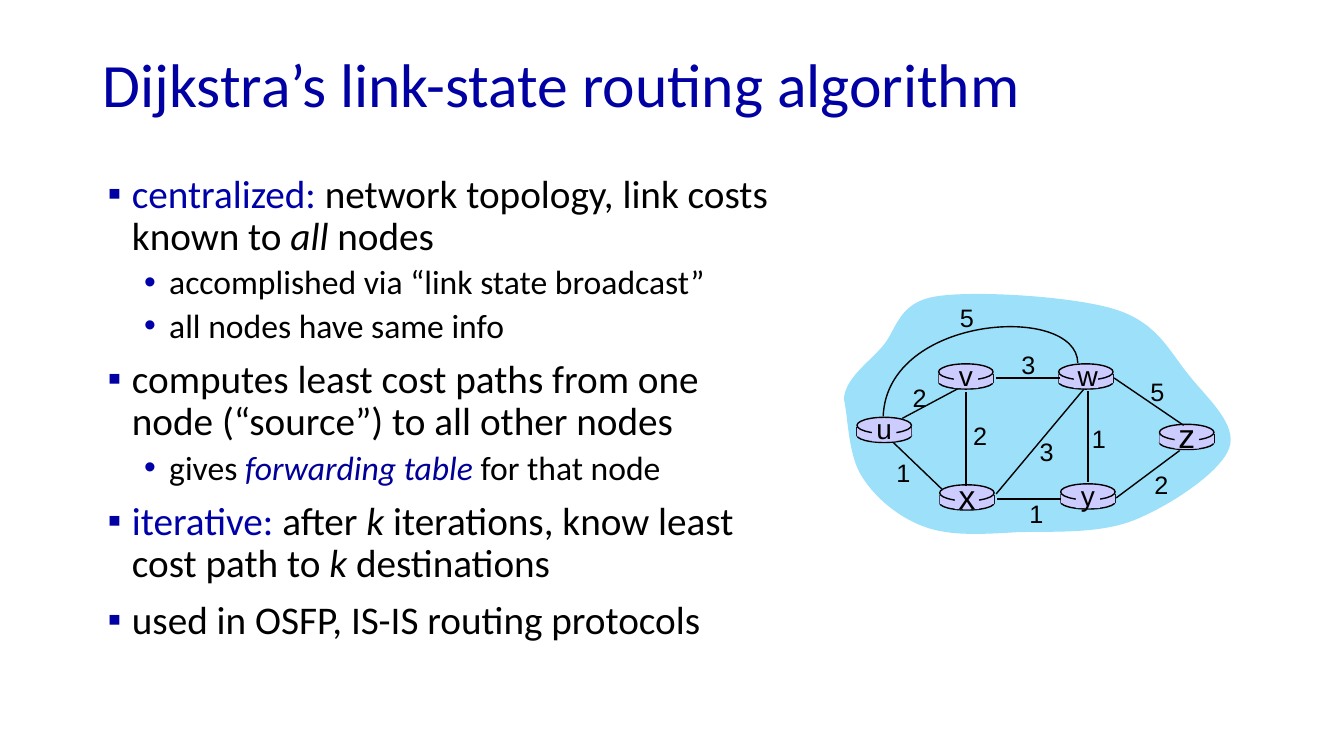
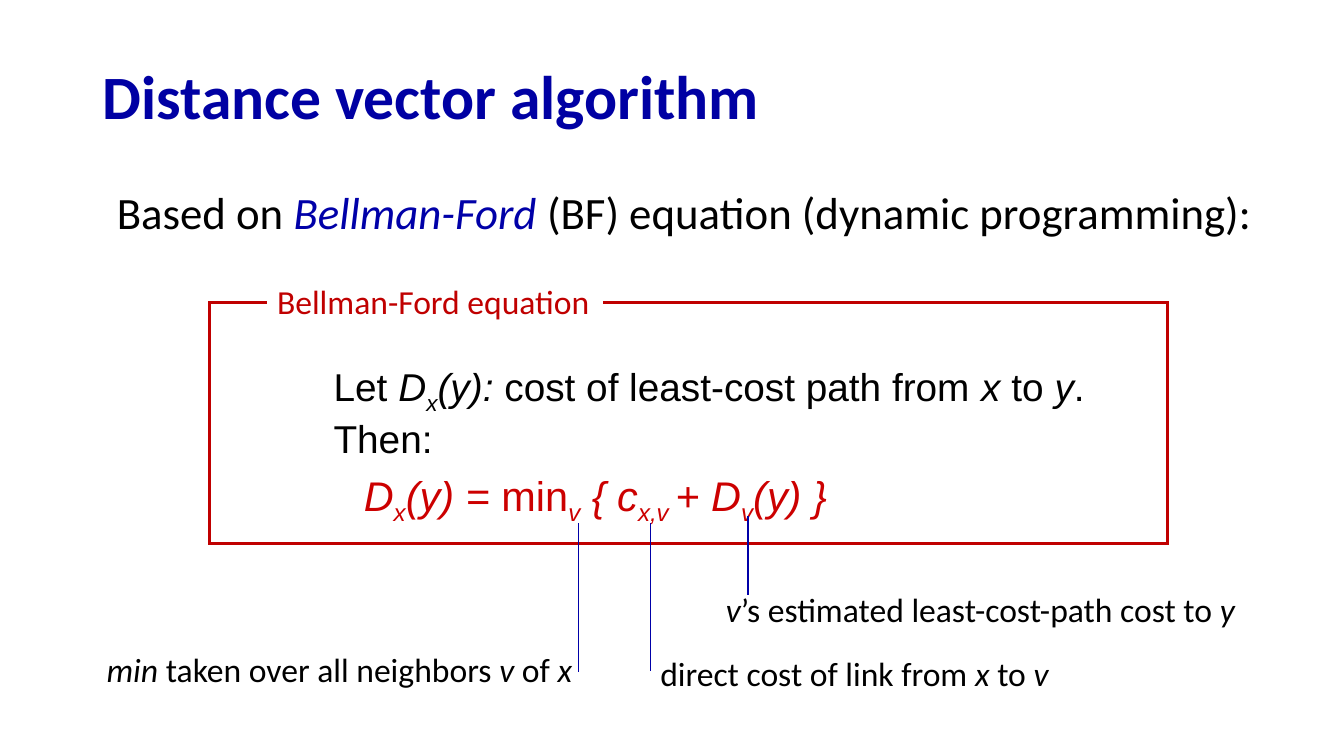
import dataclasses

import lxml.etree
import pptx
import pptx.dml.color
import pptx.enum.shapes
import pptx.enum.text
import pptx.oxml.ns
import pptx.util

Inches = pptx.util.Inches
Pt = pptx.util.Pt
SHAPES = pptx.enum.shapes.MSO_SHAPE
ANCHORS = pptx.enum.text.MSO_ANCHOR
ALIGNS = pptx.enum.text.PP_ALIGN


@dataclasses.dataclass(frozen=True)
class Theme:
    title_ink: str = "0000A3"
    key_ink: str = "0000A8"
    term_ink: str = "000099"
    ink: str = "000000"
    paper: str = "FFFFFF"
    frame_ink: str = "C00000"
    formula_ink: str = "CC0000"
    cloud: str = "9CE0FA"
    router: str = "CCCCFF"
    prose: str = "Calibri"
    figure: str = "Arial"
    title_size: float = 44
    lead_size: float = 32
    body_size: float = 28
    detail_size: float = 24
    definition_size: float = 27.7
    formula_size: float = 29.6
    node_size: float = 20
    cost_size: float = 18


THEME = Theme()

SPAN_STYLES = {
    "plain": {},
    "key": {"ink": THEME.key_ink},
    "emph": {"italic": True},
    "term": {"ink": THEME.term_ink, "italic": True},
    "name": {"ink": THEME.key_ink, "italic": True},
    "sub": {"italic": True, "lowered": True},
}

BULLETS = [
    {"size": THEME.body_size, "margin": 0.39, "indent": -0.24, "before": 10,
     "mark": "▪", "mark_ink": THEME.title_ink},
    {"size": THEME.detail_size, "margin": 0.76, "indent": -0.25, "before": 5,
     "mark": "•", "mark_ink": THEME.key_ink},
]


def rgb(value):
    return pptx.dml.color.RGBColor.from_string(value)


def add_node(parent, tag, **attributes):
    return lxml.etree.SubElement(parent, pptx.oxml.ns.qn(tag), attributes)


def paint(shape, fill=None, line=None, width=1):
    shape.shadow.inherit = False
    if fill:
        shape.fill.solid()
        shape.fill.fore_color.rgb = rgb(fill)
    else:
        shape.fill.background()
    if line:
        shape.line.color.rgb = rgb(line)
        shape.line.width = Pt(width)
    else:
        shape.line.fill.background()
    return shape


def add_preset(page, kind, box, **look):
    return paint(page.shapes.add_shape(kind, *map(Inches, box)), **look)


def add_line(page, start, end, ink):
    line = page.shapes.add_connector(
        pptx.enum.shapes.MSO_CONNECTOR.STRAIGHT, *map(Inches, (*start, *end)))
    line.line.color.rgb = rgb(ink)
    line.line.width = Pt(1)
    add_node(line._element.spPr, "a:effectLst")


def add_curve(page, start, segments, closed, **look):
    builder = page.shapes.build_freeform(*map(Inches, start))
    builder.add_line_segments(
        [tuple(map(Inches, point)) for segment in segments for point in segment],
        close=closed)
    shape = paint(builder.convert_to_shape(), **look)
    corners = list(shape._element.iter(pptx.oxml.ns.qn("a:lnTo")))
    for first in range(0, len(corners), 3):
        curve = lxml.etree.Element(pptx.oxml.ns.qn("a:cubicBezTo"))
        corners[first].addprevious(curve)
        for corner in corners[first:first + 3]:
            curve.append(corner[0])
            corner.getparent().remove(corner)


def add_spans(para, spans, size, face, ink, bold=False):
    for text, style in spans:
        formats = {"ink": ink, "bold": bold, "italic": False, **SPAN_STYLES[style]}
        span = para.add_run()
        span.text = text
        span.font.color.rgb = rgb(formats.pop("ink"))
        if formats.pop("lowered", False):
            span._r.get_or_add_rPr().set("baseline", "-25000")
        for name, value in {"size": Pt(size), "name": face, **formats}.items():
            setattr(span.font, name, value)


def format_para(para, spacing=1.0, before=0, margin=0, indent=0, mark=None, mark_ink=None):
    for name, value in {"line_spacing": spacing, "space_before": Pt(before)}.items():
        setattr(para, name, value)
    properties = para._p.get_or_add_pPr()
    for name, value in {"marL": margin, "indent": indent}.items():
        properties.set(name, str(int(Inches(value))))
    if mark:
        add_node(add_node(properties, "a:buClr"), "a:srgbClr", val=mark_ink)
        add_node(properties, "a:buFont", typeface=THEME.figure)
        add_node(properties, "a:buChar", char=mark)


def add_text(page, box, spans, size, face=THEME.prose, ink=THEME.ink, bold=False,
             wrap=True, anchor=ANCHORS.TOP, align=ALIGNS.LEFT, **layout):
    shape = page.shapes.add_textbox(*map(Inches, box))
    frame = shape.text_frame
    for name, value in {"word_wrap": wrap, "vertical_anchor": anchor}.items():
        setattr(frame, name, value)
    para = frame.paragraphs[0]
    para.alignment = align
    format_para(para, **layout)
    add_spans(para, spans, size, face, ink, bold)
    return shape


def add_title(page, box, text, bold=False):
    add_text(page, box, [(text, "plain")], THEME.title_size, ink=THEME.title_ink,
             bold=bold, anchor=ANCHORS.MIDDLE, spacing=0.9)


def add_centred_label(page, centre, text, size):
    width, height = 0.36, 0.4
    x, y = centre
    add_text(page, (x - width / 2, y - height / 2, width, height), [(text, "plain")],
             size, face=THEME.figure, wrap=False, anchor=ANCHORS.MIDDLE,
             align=ALIGNS.CENTER)


def add_bullets(page, box, items):
    frame = page.shapes.add_textbox(*map(Inches, box)).text_frame
    frame.word_wrap = True
    for index, (level, spans) in enumerate(items):
        para = frame.add_paragraph() if index else frame.paragraphs[0]
        para.level = level
        layout = dict(BULLETS[level])
        size = layout.pop("size")
        format_para(para, spacing=0.9, **layout)
        add_spans(para, spans, size, THEME.prose, THEME.ink)


def add_router(page, left, top):
    width, side_top, side_height = 0.54, 0.1, 0.09
    look = {"fill": THEME.router, "line": THEME.ink}
    add_preset(page, SHAPES.OVAL, (left, top + 0.11, width, 0.14), **look)
    for x in (left, left + width):
        add_line(page, (x, top + side_top), (x, top + side_top + side_height), THEME.ink)
    add_preset(page, SHAPES.RECTANGLE, (left, top + side_top, width, side_height),
               fill=THEME.router)
    add_preset(page, SHAPES.OVAL, (left, top, width, 0.16), **look)


def add_network(page, origin):
    def at(point):
        return point[0] + origin[0], point[1] + origin[1]

    def along(segments):
        return [tuple(map(at, segment)) for segment in segments]

    cloud = [
        ((0.01, 0.88), (0.23, 0.73), (0.38, 0.56)),
        ((0.53, 0.39), (0.53, 0.12), (0.92, 0.06)),
        ((1.3, 0), (2.28, 0.06), (2.69, 0.19)),
        ((3.11, 0.32), (3.23, 0.61), (3.42, 0.84)),
        ((3.6, 1.07), (3.91, 1.33), (3.82, 1.57)),
        ((3.73, 1.81), (3.23, 2.14), (2.88, 2.28)),
        ((2.53, 2.42), (2.07, 2.39), (1.72, 2.4)),
        ((1.38, 2.42), (1.06, 2.44), (0.81, 2.35)),
        ((0.55, 2.26), (0.31, 2.06), (0.18, 1.85)),
        ((0.04, 1.64), (0.04, 1.24), (0, 1.08)),
    ]
    routers = {
        "u": (0.13, 1.26, THEME.node_size), "y": (2.15, 1.92, THEME.node_size),
        "x": (0.95, 1.93, THEME.detail_size), "w": (2.13, 0.73, THEME.node_size),
        "v": (0.94, 0.73, THEME.node_size), "z": (3.13, 1.33, THEME.detail_size),
    }
    links = [
        ((0.58, 1.27), (1.18, 0.95), "2", (0.75, 1.06)),
        ((1.21, 1.01), (1.21, 1.94), "2", (1.35, 1.44)),
        ((0.97, 1.97), (0.49, 1.51), "1", (0.59, 1.81)),
        ((1.51, 2.02), (2.38, 0.98), "3", (2.01, 1.6)),
        ((2.15, 2.07), (1.52, 2.07), "1", (1.91, 2.21)),
        ((2.42, 1), (2.42, 1.9), "1", (2.53, 1.47)),
        ((2.7, 2.06), (3.33, 1.59), "2", (3.15, 1.93)),
        ((3.37, 1.34), (2.68, 0.87), "5", (3.11, 1)),
        ((2.14, 0.87), (1.51, 0.87), "3", (1.83, 0.74)),
    ]
    add_curve(page, at((0, 1.08)), along(cloud), True, fill=THEME.cloud)
    for left, top, size in routers.values():
        add_router(page, *at((left, top)))
    for start, end, cost, centre in links:
        add_line(page, at(start), at(end), THEME.ink)
    add_curve(page, at((2.32, 0.72)),
              along([((2.31, 0.13), (0.43, 0.24), (0.39, 1.25))]), False, line=THEME.ink)
    for name, (left, top, size) in routers.items():
        add_preset(page, SHAPES.RECTANGLE, (*at((left + 0.15, top + 0.02)), 0.24, 0.22),
                   fill=THEME.router)
        add_centred_label(page, at((left + 0.27, top + 0.11)), name, size)
    for start, end, cost, centre in links:
        add_centred_label(page, at(centre), cost, THEME.cost_size)
    add_centred_label(page, at((1.22, 0.27)), "5", THEME.cost_size)


def add_equation(page, box):
    left, top, width, height = box
    definition = add_text(
        page, (left + 0.98, top + 0.6, 8.7, 2.16),
        [("Let ", "plain"), ("D", "emph"), ("x", "sub"), ("(y): ", "emph"),
         ("cost of least-cost path from ", "plain"), ("x", "emph"), (" to ", "plain"),
         ("y", "emph"), (".", "plain")],
        THEME.definition_size, face=THEME.figure, spacing=0.8, before=10, margin=0.15)
    formula = [("D", "emph"), ("x", "sub"), ("(y) = ", "emph"), ("min", "plain"),
               ("v", "sub"), (" { c", "emph"), ("x,v ", "sub"), ("+ D", "emph"),
               ("v", "sub"), ("(y) }", "emph")]
    for spans, size, ink, margin in (
            ([("Then:", "plain")], THEME.definition_size, THEME.ink, 0.15),
            (formula, THEME.formula_size, THEME.formula_ink, 0.45)):
        para = definition.text_frame.add_paragraph()
        format_para(para, spacing=0.8, before=10, margin=margin)
        add_spans(para, spans, size, THEME.figure, ink)
    frame = add_preset(page, SHAPES.RECTANGLE, box, line=THEME.frame_ink, width=2)
    add_node(frame.line._get_or_add_ln(), "a:miter", lim="800000")
    caption = add_text(page, (left + 0.57, top - 0.26, 3.33, 0.5),
                       [("Bellman-Ford equation", "plain")], THEME.detail_size,
                       ink=THEME.frame_ink, wrap=False)
    paint(caption, fill=THEME.paper)


def add_callout(page, box, spans, line_x, line_top, line_bottom):
    left, top = box[:2]
    add_text(page, box, spans, THEME.detail_size, wrap=False)
    add_line(page, (left + line_x, top + line_top), (left + line_x, top + line_bottom),
             THEME.key_ink)


def build_link_state(page):
    add_title(page, (0.92, 0.38, 10.76, 0.98), "Dijkstra’s link-state routing algorithm")
    add_bullets(page, (0.82, 1.68, 6.99, 5.36), [
        (0, [("centralized: ", "key"), ("network topology, link costs known to ", "plain"),
             ("all", "emph"), (" nodes", "plain")]),
        (1, [("accomplished via “link state broadcast”", "plain")]),
        (1, [("all nodes have same info", "plain")]),
        (0, [("computes least cost paths from one node (“source”) to all other nodes",
              "plain")]),
        (1, [("gives ", "plain"), ("forwarding table", "term"), (" for that node", "plain")]),
        (0, [("iterative: ", "key"), ("after ", "plain"), ("k", "emph"),
             (" iterations, know least cost path to ", "plain"), ("k ", "emph"),
             ("destinations", "plain")]),
        (0, [("used in OSFP, IS-IS routing protocols", "plain")]),
    ])
    add_network(page, (8.37, 2.88))


def build_distance_vector(page):
    add_text(page, (0.92, 1.89, 11.83, 0.57),
             [("Based on ", "plain"), ("Bellman-Ford", "name"),
              (" (BF) equation (dynamic programming):", "plain")],
             THEME.lead_size, spacing=0.8, before=10, margin=0.14)
    add_title(page, (0.92, 0.5, 11.5, 0.98), "Distance vector algorithm", bold=True)
    add_equation(page, (2.08, 3, 9.5, 2.39))
    add_callout(page, (0.96, 6.39, 4.86, 0.5),
                [("min", "emph"), (" taken over all neighbors", "plain"), (" v ", "emph"),
                 ("of ", "plain"), ("x", "emph")], 4.78, -1.2, 0.28)
    add_callout(page, (7.1, 5.79, 5.31, 0.5),
                [("v", "emph"), ("’s estimated least-cost-path cost to ", "plain"),
                 ("y", "emph")], 0.32, -0.67, 0.11)
    add_callout(page, (6.45, 6.43, 4.08, 0.5),
                [("direct cost of link from", "plain"), (" x ", "emph"), ("to ", "plain"),
                 ("v", "emph")], 0, -1.24, 0.23)


def main():
    deck = pptx.Presentation()
    deck.slide_width = Inches(13.33)
    deck.slide_height = Inches(7.5)
    for build in (build_link_state, build_distance_vector):
        build(deck.slides.add_slide(deck.slide_layouts[6]))
    deck.save("out.pptx")


if __name__ == "__main__":
    main()
